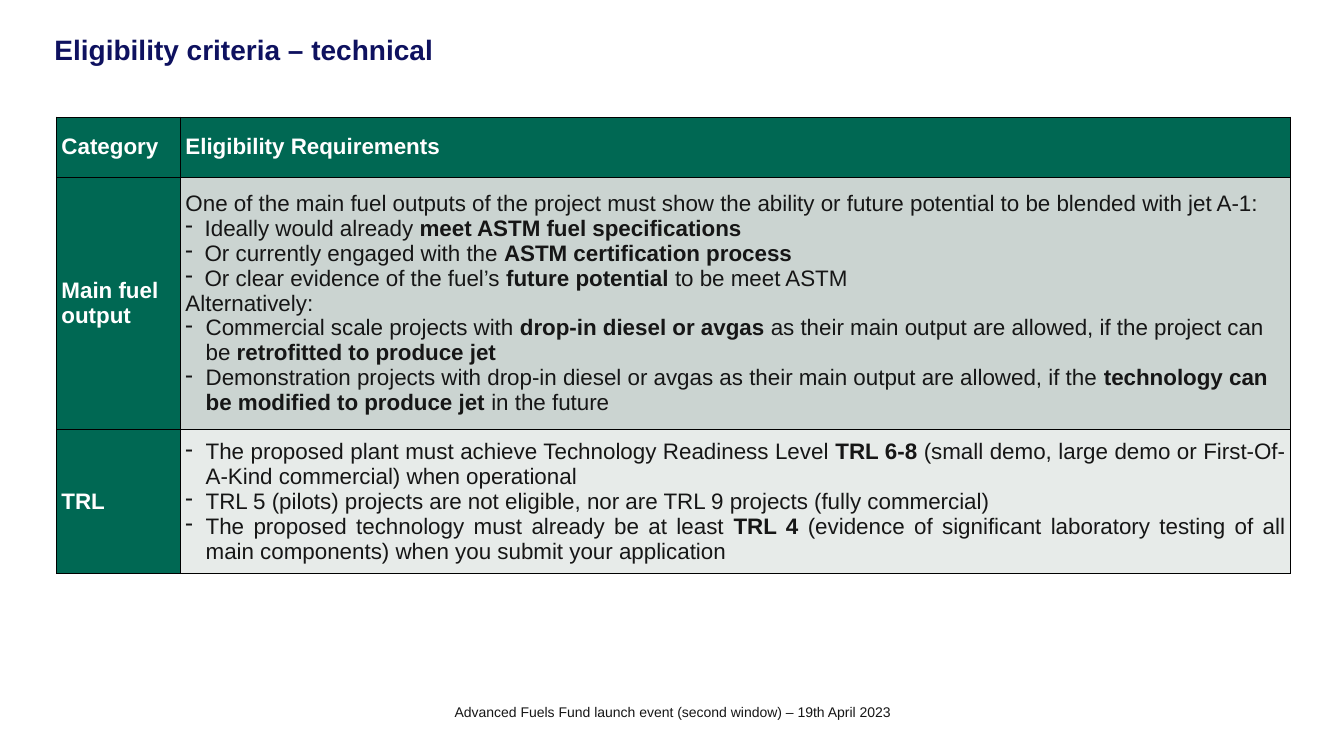
from lxml import etree
from pptx import Presentation
from pptx import util as u
from pptx.dml.color import RGBColor
from pptx.enum import text
from pptx.oxml.ns import qn

NAVY = RGBColor(0x0E, 0x11, 0x5F)
INK = RGBColor(0x16, 0x16, 0x16)
WHITE = RGBColor(0xFF, 0xFF, 0xFF)
GREEN = RGBColor(0x00, 0x68, 0x53)
GREY = RGBColor(0xCB, 0xD4, 0xD1)
PALE = RGBColor(0xE7, 0xEB, 0xE9)
BLACK = RGBColor(0x00, 0x00, 0x00)

LEFT = text.PP_ALIGN.LEFT
CENTER = text.PP_ALIGN.CENTER
JUSTIFY = text.PP_ALIGN.JUSTIFY

FUEL_OUTPUT = [
    ("One of the main fuel outputs of the project must show the ability or future "
     "potential to be blended with jet A-1:", JUSTIFY, 0),
    ("Ideally would already **meet ASTM fuel specifications**", LEFT, 0.19),
    ("Or currently engaged with the **ASTM certification process**", LEFT, 0.19),
    ("Or clear evidence of the fuel’s **future potential **to be meet ASTM", LEFT, 0.19),
    ("Alternatively:", LEFT, 0),
    ("Commercial scale projects with **drop-in diesel or avgas **as their main output "
     "are allowed, if the project can be **retrofitted to produce jet**", LEFT, 0.2),
    ("Demonstration projects with drop-in diesel or avgas as their main output are "
     "allowed, if the **technology can be modified to produce jet **in the future",
     LEFT, 0.2),
]
READINESS = [
    ("The proposed plant must achieve Technology Readiness Level **TRL 6-8** (small demo, "
     "large demo or First-Of-A-Kind commercial) when operational", JUSTIFY, 0.2),
    ("TRL 5 (pilots) projects are not eligible, nor are TRL 9 projects (fully commercial)",
     JUSTIFY, 0.2),
    ("The proposed technology must already be at least **TRL 4 **(evidence of significant "
     "laboratory testing of all main components) when you submit your application",
     JUSTIFY, 0.2),
]
CRITERIA = [
    ("Category", [("**Eligibility Requirements**", JUSTIFY, 0)], 0.6, GREEN, WHITE),
    ("Main fuel output", FUEL_OUTPUT, 2.32, GREY, INK),
    ("TRL", READINESS, 1.33, PALE, INK),
]


def write(paragraph, wording, size=16, color=INK, align=LEFT, indent=0, spacing=None):
    paragraph.alignment = align
    if spacing:
        paragraph.line_spacing = spacing
    if indent:
        properties = paragraph._p.get_or_add_pPr()
        properties.set("marL", str(u.Inches(indent)))
        properties.set("indent", str(-u.Inches(indent)))
        etree.SubElement(properties, qn("a:buChar"), char="-")
    for position, part in enumerate(wording.split("**")):
        if part:
            run = paragraph.add_run()
            run.text = part
            run.font.name = "Arial"
            run.font.size = u.Pt(size)
            run.font.bold = position % 2 == 1
            run.font.color.rgb = color


def add_borders(cell):
    properties = cell._tc.get_or_add_tcPr()
    for side in ("a:lnL", "a:lnR", "a:lnT", "a:lnB"):
        line = etree.SubElement(properties, qn(side), w=str(u.Pt(0.63)))
        fill = etree.SubElement(line, qn("a:solidFill"))
        etree.SubElement(fill, qn("a:srgbClr"), val=str(BLACK))


def fill_cell(cell, paragraphs, fill, color):
    add_borders(cell)
    cell.fill.solid()
    cell.fill.fore_color.rgb = fill
    cell.vertical_anchor = text.MSO_ANCHOR.MIDDLE
    cell.margin_left = cell.margin_right = u.Inches(0.05)
    cell.margin_top = cell.margin_bottom = u.Inches(0.05)
    frame = cell.text_frame
    for number, (wording, align, indent) in enumerate(paragraphs):
        paragraph = frame.add_paragraph() if number else frame.paragraphs[0]
        write(paragraph, wording, color=color, align=align, indent=indent)


def add_title(slide, wording):
    title = slide.shapes.title
    title.left, title.top = u.Inches(0.54), u.Inches(0.36)
    title.width, title.height = u.Inches(12.27), u.Inches(1.37)
    frame = title.text_frame
    frame.margin_left = frame.margin_right = frame.margin_top = frame.margin_bottom = 0
    frame.vertical_anchor = text.MSO_ANCHOR.TOP
    write(frame.paragraphs[0], f"**{wording}**", size=20, color=NAVY, spacing=0.9)


def add_event_line(slide, wording):
    event = slide.shapes.add_textbox(
        u.Inches(3.88), u.Inches(6.93), u.Inches(5.58), u.Inches(0.2))
    event.text_frame.word_wrap = True
    write(event.text_frame.paragraphs[0], wording, size=10, align=CENTER)


def add_criteria(slide):
    height = sum(row[2] for row in CRITERIA)
    criteria = slide.shapes.add_table(
        len(CRITERIA), 2, u.Inches(0.56), u.Inches(1.16),
        u.Inches(12.24), u.Inches(height)).table
    criteria.horz_banding = False
    criteria.columns[0].width = u.Inches(1.23)
    criteria.columns[1].width = u.Inches(11.01)
    for number, (category, requirements, row_height, fill, color) in enumerate(CRITERIA):
        criteria.rows[number].height = u.Inches(row_height)
        fill_cell(criteria.cell(number, 0), [(f"**{category}**", LEFT, 0)], GREEN, WHITE)
        fill_cell(criteria.cell(number, 1), requirements, fill, color)


def main():
    deck = Presentation()
    deck.slide_width, deck.slide_height = u.Inches(13.33), u.Inches(7.5)
    slide = deck.slides.add_slide(deck.slide_layouts[5])
    add_title(slide, "Eligibility criteria – technical")
    add_event_line(slide, "Advanced Fuels Fund launch event (second window) – 19th April 2023")
    add_criteria(slide)
    deck.save("out.pptx")


if __name__ == "__main__":
    main()
